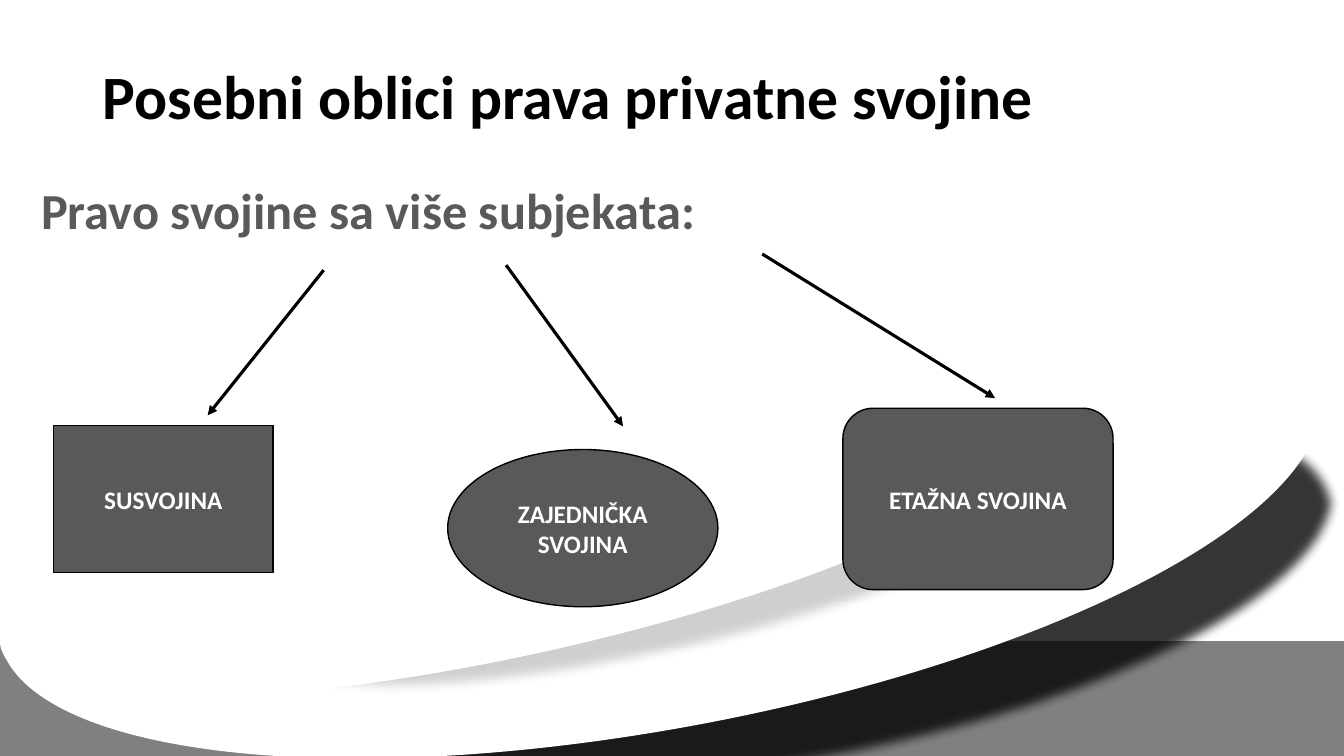
from lxml.etree import SubElement
from pptx import Presentation
from pptx.dml.color import RGBColor
from pptx.enum.shapes import MSO_CONNECTOR, MSO_SHAPE
from pptx.enum.text import MSO_ANCHOR, PP_ALIGN
from pptx.oxml.ns import qn
from pptx.util import Inches, Pt

BLACK = RGBColor(0, 0, 0)
WHITE = RGBColor(255, 255, 255)
GRAY = RGBColor(0x80, 0x80, 0x80)
DARK = RGBColor(0x59, 0x59, 0x59)
FONT = "Calibri"

# Content: text, left, top, width, height, size, colour
TEXTS = [
    ("Posebni oblici prava privatne svojine", 0.92, 0.61, 11.5, 1.45, 44, BLACK),
    ("Pravo svojine sa više subjekata:", 0.31, 1.8, 12.15, 4.84, 36, DARK),
]
FORMS = [
    ("SUSVOJINA", MSO_SHAPE.RECTANGLE, 0.53, 4.22, 2.18, 1.46),
    ("ZAJEDNIČKA SVOJINA", MSO_SHAPE.OVAL, 4.44, 4.46, 2.68, 1.56),
    ("ETAŽNA SVOJINA", MSO_SHAPE.ROUNDED_RECTANGLE, 8.36, 4.05, 2.68, 1.8),
]
ARROWS = [
    (3.21, 2.68, 2.06, 4.12),
    (5.02, 2.63, 6.18, 4.23),
    (7.56, 2.52, 9.87, 3.95),
]
# Swooshes: centre, size, tilt, shade centre, shade opacity in percent
SWOOSHES = [
    (6.54, 5.12, 13.32, 4.21, -10.6, 8.0, 5.89, 79),
    (5.22, 5.24, 10.69, 2.47, -12.7, 6.63, 5.5, 19),
]
SHRINK = 0.8   # shade size relative to its swoosh
SOFT = 0.1     # extra size lost to the soft edge

deck = Presentation()
deck.slide_width, deck.slide_height = Inches(13.33), Inches(7.5)
slide = deck.slides.add_slide(deck.slide_layouts[6])
shapes = slide.shapes


def add_form(kind, left, top, wide, high, fill):
    form = shapes.add_shape(kind, *map(Inches, (left, top, wide, high)))
    form.shadow.inherit = False
    form.fill.solid()
    form.fill.fore_color.rgb = fill
    form.line.fill.background()
    return form


def add_oval(mid_x, mid_y, wide, high, tilt, fill):
    oval = add_form(MSO_SHAPE.OVAL, mid_x - wide / 2, mid_y - high / 2,
                    wide, high, fill)
    oval.rotation = tilt
    return oval


def set_text(frame, text, size, color):
    frame.word_wrap = True
    para = frame.paragraphs[0]
    para.text = text
    font = para.font
    font.name, font.size, font.bold = FONT, Pt(size), True
    font.color.rgb = color
    return para


# Background bar and swooshes with soft shades
add_form(MSO_SHAPE.RECTANGLE, 0, 6.36, 13.33, 1.14, GRAY)
for mid_x, mid_y, wide, high, tilt, dark_x, dark_y, alpha in SWOOSHES:
    shade = add_oval(dark_x, dark_y, wide * SHRINK + SOFT,
                     high * SHRINK + SOFT, tilt, BLACK)
    props = shade._element.spPr
    color = props.find(qn("a:solidFill"))[0]
    SubElement(color, qn("a:alpha"), val=str(alpha * 1000))
    SubElement(props.find(qn("a:effectLst")), qn("a:softEdge"),
               rad=str(Pt(8)))
    add_oval(mid_x, mid_y, wide, high, tilt, WHITE)

# Title and lead line
for text, left, top, wide, high, size, color in TEXTS:
    box = shapes.add_textbox(*map(Inches, (left, top, wide, high)))
    set_text(box.text_frame, text, size, color).line_spacing = 0.9

# Arrows
for ends in ARROWS:
    arrow = shapes.add_connector(MSO_CONNECTOR.STRAIGHT, *map(Inches, ends))
    arrow.line.color.rgb = BLACK
    arrow.line.width = Pt(2.25)
    SubElement(arrow.line._get_or_add_ln(), qn("a:tailEnd"), type="triangle")
    SubElement(arrow._element.spPr, qn("a:effectLst"))

# Kinds of ownership
for text, kind, left, top, wide, high in FORMS:
    form = add_form(kind, left, top, wide, high, DARK)
    form.line.color.rgb = BLACK
    form.line.width = Pt(1)
    form.text_frame.vertical_anchor = MSO_ANCHOR.MIDDLE
    set_text(form.text_frame, text, 18, WHITE).alignment = PP_ALIGN.CENTER

deck.save("out.pptx")
